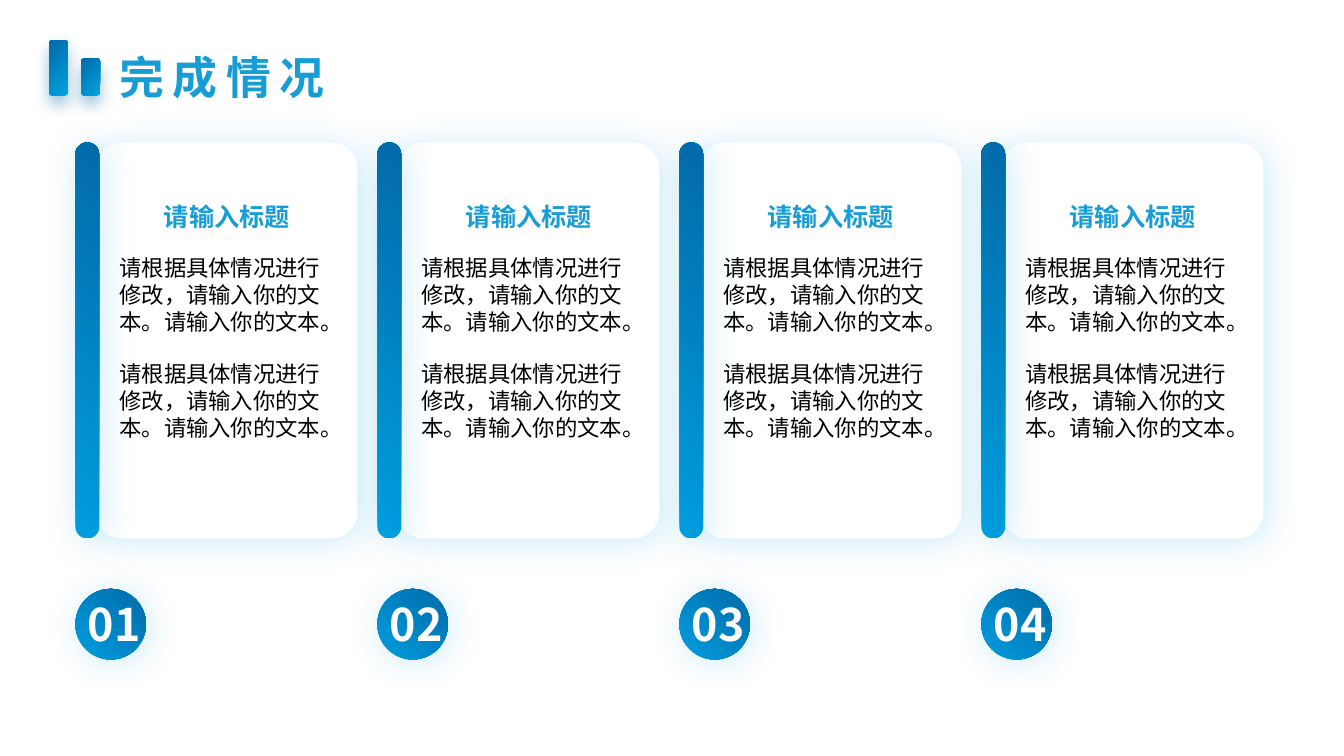
from lxml import etree
from pptx import Presentation
from pptx.dml.color import RGBColor
from pptx.enum.shapes import MSO_SHAPE
from pptx.enum.text import MSO_ANCHOR, MSO_AUTO_SIZE, PP_ALIGN
from pptx.oxml.ns import qn
from pptx.util import Cm, Pt

ROUNDED, OVAL = MSO_SHAPE.ROUNDED_RECTANGLE, MSO_SHAPE.OVAL
TOP = MSO_ANCHOR.TOP
GROW = MSO_AUTO_SIZE.SHAPE_TO_FIT_TEXT
LEFT = PP_ALIGN.LEFT

WHITE = RGBColor(0xFF, 0xFF, 0xFF)
BLACK = RGBColor(0x00, 0x00, 0x00)
SKY = RGBColor(0x16, 0x9D, 0xD5)
CYAN = RGBColor(0x00, 0xA3, 0xE2)
AZURE = RGBColor(0x00, 0x9E, 0xDF)
NAVY = RGBColor(0x02, 0x6A, 0xA8)

FONT = "Noto Sans CJK SC"
TITLE_FORMAT = {"size": Pt(32), "bold": True}
HEADING_FORMAT = {"size": Pt(18), "bold": True}
BODY_FORMAT = {"size": Pt(16), "bold": False}
CARD_GLOW = {"color": CYAN, "opacity": 20, "blur": 25, "distance": 3, "angle": 45}
BAR_GLOW = {"color": NAVY, "opacity": 40, "blur": 11, "distance": 6, "angle": 90}

HEADING = "请输入标题"
BODY = "请根据具体情况进行修改，请输入你的文本。请输入你的文本。"
NUMBERS = ["01", "02", "03", "04"]
CARD_PITCH = 7.61


def add_glow(shape, color, opacity, blur, distance, angle):
    """Give the shape a soft coloured outer shadow."""
    shape.shadow.inherit = False
    effects = shape._element.spPr.find(qn("a:effectLst"))
    outer = etree.SubElement(effects, qn("a:outerShdw"), {
        "blurRad": str(Pt(blur)), "dist": str(Pt(distance)),
        "dir": str(angle * 60000), "algn": "ctr", "rotWithShape": "0"})
    tint = etree.SubElement(outer, qn("a:srgbClr"), val=str(color))
    etree.SubElement(tint, qn("a:alpha"), val=str(opacity * 1000))


def add_panel(page, kind, box, colors, glow, angle=45, corner=None):
    """Add a borderless shape with a plain or two-colour gradient fill."""
    shape = page.shapes.add_shape(kind, *map(Cm, box))
    if corner is not None:
        shape.adjustments[0] = corner
    if len(colors) == 1:
        shape.fill.solid()
        shape.fill.fore_color.rgb = colors[0]
    else:
        shape.fill.gradient()
        shape.fill.gradient_angle = angle
        for stop, color in zip(shape.fill.gradient_stops, colors):
            stop.color.rgb = color
    shape.line.fill.background()
    add_glow(shape, **glow)
    return shape


def write_text(shape, text, text_format, color, wrap=False):
    """Write one formatted left-aligned paragraph into the shape."""
    frame = shape.text_frame
    frame_format = {"word_wrap": wrap, "auto_size": GROW, "vertical_anchor": TOP}
    for name, value in frame_format.items():
        setattr(frame, name, value)
    para = frame.paragraphs[0]
    para.alignment = LEFT
    span = para.add_run()
    span.text = text
    for name, value in {**text_format, "name": FONT}.items():
        setattr(span.font, name, value)
    span.font.color.rgb = color
    etree.SubElement(span._r.get_or_add_rPr(), qn("a:ea"), typeface=FONT)
    return span


def add_label(page, box, text, text_format, color, wrap=False):
    """Add a text box holding one paragraph."""
    label = page.shapes.add_textbox(*map(Cm, box))
    write_text(label, text, text_format, color, wrap)


def add_header(page, left, top):
    """Place the two accent bars and the slide title."""
    for offset, drop, height in [(0, 0, 1.4), (0.81, 0.46, 0.94)]:
        bar = add_panel(page, ROUNDED, (left + offset, top + drop, 0.47, height),
                        (CYAN, NAVY), BAR_GLOW, angle=315)
        bar.rotation = 180
    title = page.shapes.title
    title_box = {"left": left + 1.52, "top": top + 0.11, "width": 5.9, "height": 1.62}
    for name, value in title_box.items():
        setattr(title, name, Cm(value))
    span = write_text(title, "完成情况", TITLE_FORMAT, SKY)
    span._r.get_or_add_rPr().set("spc", "600")


def add_card(page, left, top, number):
    """Place one card with its spine, texts and numbered circle."""
    add_panel(page, ROUNDED, (left + 0.51, top, 6.6, 9.98), (WHITE,), CARD_GLOW,
              corner=0.1)
    add_panel(page, ROUNDED, (left, top, 0.6, 9.98), (AZURE, NAVY), CARD_GLOW,
              corner=0.5)
    add_label(page, (left + 1.98, top + 1.35, 3.81, 1.02), HEADING,
              HEADING_FORMAT, SKY)
    for drop in (2.69, 5.36):
        add_label(page, (left + 0.86, top + drop, 5.94, 2.31), BODY,
                  BODY_FORMAT, BLACK, wrap=True)
    add_panel(page, OVAL, (left, top + 11.25, 1.78, 1.78), (AZURE, NAVY), CARD_GLOW)
    add_label(page, (left + 0.06, top + 11.33, 1.9, 1.62), number,
              TITLE_FORMAT, WHITE)


def main():
    """Build the slide and save the deck."""
    deck = Presentation()
    deck.slide_width, deck.slide_height = Cm(33.87), Cm(19.05)
    page = deck.slides.add_slide(deck.slide_layouts[5])
    add_header(page, 1.24, 1.01)
    for index, number in enumerate(NUMBERS):
        add_card(page, 1.9 + index * CARD_PITCH, 3.59, number)
    deck.save("out.pptx")


if __name__ == "__main__":
    main()
